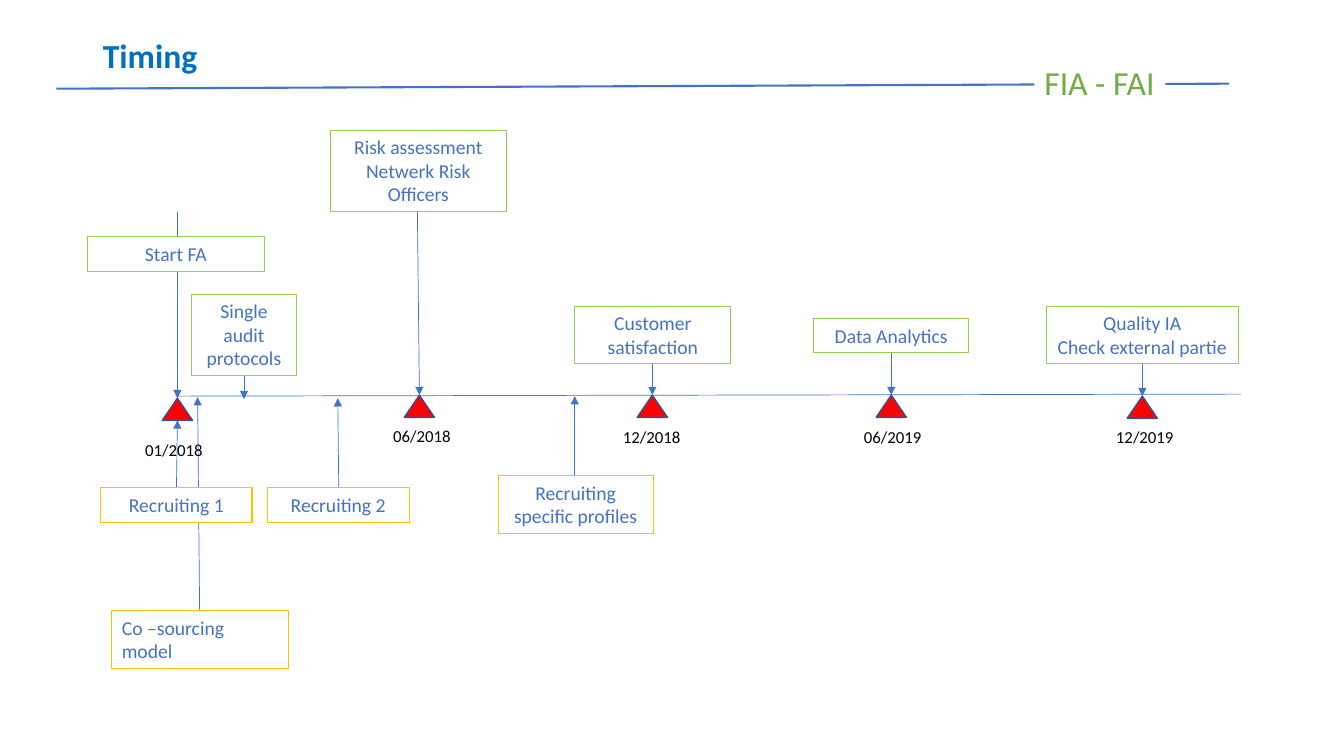
"""Build the Timing slide: a timeline with milestones, activities and recruiting steps."""
from lxml import etree
from pptx import Presentation
from pptx.dml.color import RGBColor
from pptx.enum import shapes, text
from pptx.oxml.ns import qn
from pptx.util import Inches, Pt

BLUE, GREEN, LIME, GOLD = "4472C4", "70AD47", "92D050", "FFC000"
LEFT, CENTER = text.PP_ALIGN.LEFT, text.PP_ALIGN.CENTER


def draw_line(start, end, width=0.5, arrow=True):
    line = page.shapes.add_connector(
        shapes.MSO_CONNECTOR.STRAIGHT, *[Inches(n) for n in start + end])
    line.line.color.rgb = RGBColor.from_string(BLUE)
    line.line.width = Pt(width)
    if arrow:
        etree.SubElement(line.line._get_or_add_ln(), qn("a:tailEnd"), type="triangle")
    etree.SubElement(line._element.spPr, qn("a:effectLst"))


def draw_box(kind, at, lines=(), size=14, color=BLUE, align=CENTER,
             fill=None, edge=None, width=0.75, wrap=True):
    box = page.shapes.add_shape(kind, *[Inches(n) for n in at])
    box.shadow.inherit = False
    if fill:
        box.fill.solid()
        box.fill.fore_color.rgb = RGBColor.from_string(fill)
    else:
        box.fill.background()
    if edge:
        box.line.color.rgb = RGBColor.from_string(edge)
        box.line.width = Pt(width)
    else:
        box.line.fill.background()
    frame = box.text_frame
    frame.word_wrap = wrap
    frame.vertical_anchor = text.MSO_ANCHOR.TOP
    for index, words in enumerate(lines):
        para = frame.add_paragraph() if index else frame.paragraphs[0]
        para.text = words
        para.alignment = align
        para.font.name = "Calibri"
        para.font.size = Pt(size)
        para.font.color.rgb = RGBColor.from_string(color)


deck = Presentation()
deck.slide_width, deck.slide_height = Inches(13.33), Inches(7.5)
page = deck.slides.add_slide(deck.slide_layouts[5])
RECTANGLE = shapes.MSO_SHAPE.RECTANGLE
TRIANGLE = shapes.MSO_SHAPE.ISOSCELES_TRIANGLE

title = page.shapes.title
title.left, title.top, title.width, title.height = [
    Inches(n) for n in (0.92, 0.4, 11.5, 0.35)]
title.text_frame.text = "Timing"
title.text_frame.auto_size = text.MSO_AUTO_SIZE.NONE
title.text_frame.vertical_anchor = text.MSO_ANCHOR.MIDDLE
heading = title.text_frame.paragraphs[0]
heading.alignment = LEFT
heading.line_spacing = 0.9
heading.font.name = "Calibri"
heading.font.size = Pt(24)
heading.font.bold = True
heading.font.color.rgb = RGBColor.from_string("0070C0")

draw_line((0.56, 0.88), (12.19, 0.83), width=1.5, arrow=False)
draw_box(RECTANGLE, (10.26, 0.57, 1.3, 0.5), ["FIA - FAI"], size=24,
         color=GREEN, align=LEFT, fill="FFFFFF", wrap=False)

draw_line((1.74, 3.93), (12.31, 3.91), arrow=False)
arrows = [
    ((1.98, 6.06), (1.96, 3.94)),
    ((1.76, 2.1), (1.76, 3.95)),
    ((4.14, 2.1), (4.16, 3.92)),
    ((2.42, 3.73), (2.42, 3.96)),
    ((1.75, 4.84), (1.76, 4.17)),
    ((5.7, 4.72), (5.7, 3.93)),
    ((3.36, 4.84), (3.35, 3.95)),
    ((8.84, 3.49), (8.84, 3.92)),
    ((11.33, 3.61), (11.33, 3.93)),
    ((6.47, 3.61), (6.47, 3.92)),
]
for start, end in arrows:
    draw_line(start, end)

milestones = [
    ("01/2018", 1.61, 3.95, 1.34, 4.31),
    ("06/2018", 4.01, 3.92, 3.8, 4.17),
    ("12/2018", 6.32, 3.92, 6.08, 4.18),
    ("06/2019", 8.69, 3.92, 8.47, 4.18),
    ("12/2019", 11.18, 3.93, 10.97, 4.18),
]
for date, marker_left, marker_top, date_left, date_top in milestones:
    draw_box(TRIANGLE, (marker_left, marker_top, 0.3, 0.22),
             fill="FF0000", edge="325491", width=1)
    draw_box(RECTANGLE, (date_left, date_top, 0.78, 0.3), [date], size=12,
             color="000000", align=LEFT, wrap=False)

activities = [
    ((0.87, 2.35, 1.75, 0.34), ["Start FA"], "FFFFFF"),
    ((1.9, 2.92, 1.04, 0.81), ["Single audit", "protocols"], None),
    ((3.28, 1.29, 1.74, 0.81), ["Risk assessment", "Netwerk Risk Officers"], None),
    ((5.7, 3.04, 1.55, 0.57), ["Customer satisfaction"], None),
    ((8.07, 3.16, 1.54, 0.34), ["Data Analytics"], None),
]
for at, lines, fill in activities:
    draw_box(RECTANGLE, at, lines, fill=fill, edge=LIME)
draw_box(RECTANGLE, (10.38, 3.04, 1.9, 0.57), ["Quality IA", "Check external partie"],
         edge=LIME, wrap=False)

recruiting = [
    ((1, 4.84, 1.5, 0.34), ["Recruiting 1"], CENTER, "FFFFFF"),
    ((2.65, 4.84, 1.41, 0.34), ["Recruiting 2"], CENTER, None),
    ((4.94, 4.72, 1.54, 0.57), ["Recruiting", "specific profiles"], CENTER, None),
    ((1.11, 6.06, 1.75, 0.57), ["Co –sourcing model"], LEFT, None),
]
for at, lines, align, fill in recruiting:
    draw_box(RECTANGLE, at, lines, align=align, fill=fill, edge=GOLD)

deck.save("out.pptx")
